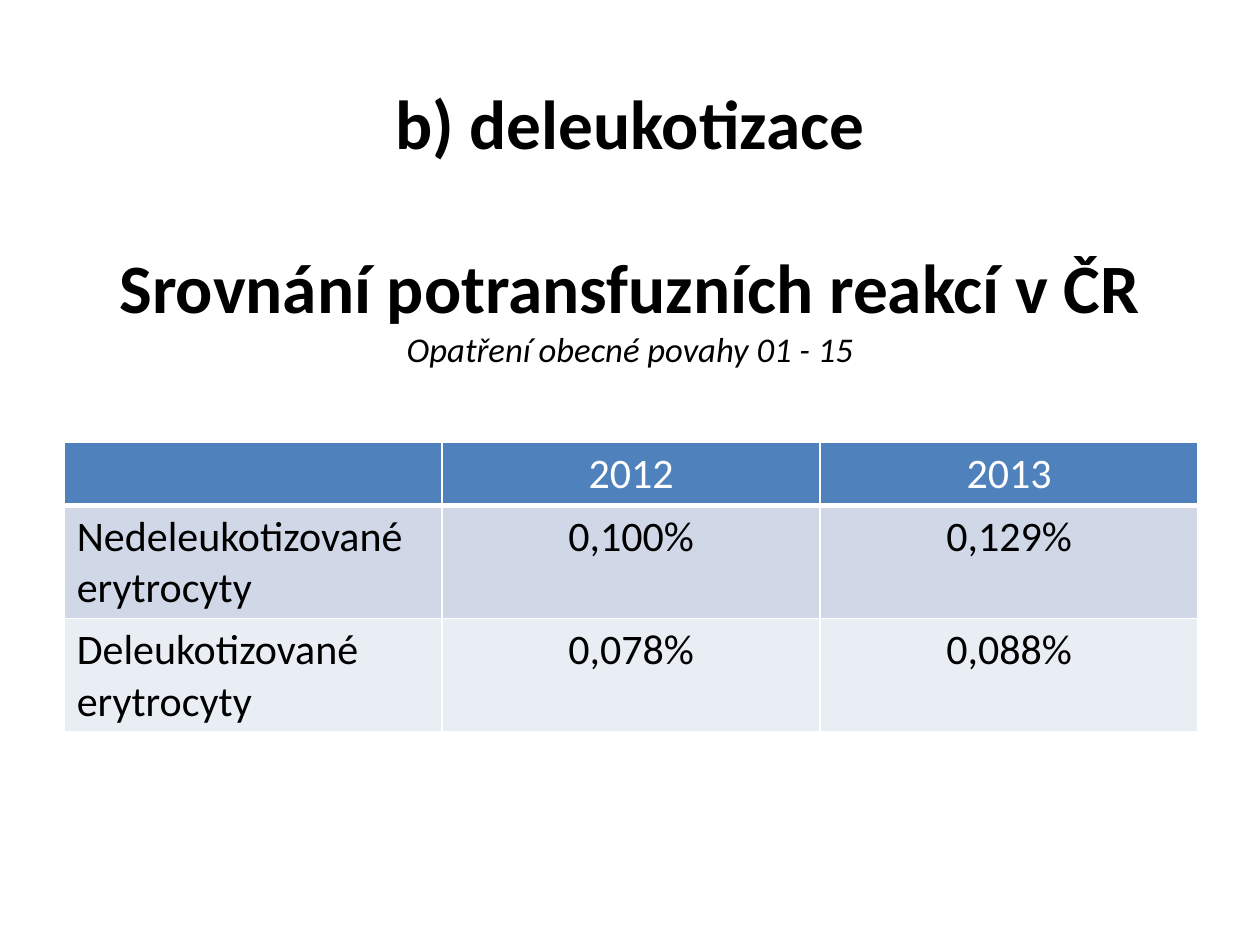
from lxml import etree
from pptx import Presentation
from pptx import util as u
from pptx.dml.color import RGBColor
from pptx.enum import text
from pptx.oxml.ns import qn

COLORS = {
    "text": "000000",
    "white": "FFFFFF",
    "header": "4F81BD",
    "odd_row": "D0D8E8",
    "even_row": "E9EDF4",
}
CENTER = text.PP_ALIGN.CENTER
LEFT = text.PP_ALIGN.LEFT


class SlideBuilder:
    """Holds the style and the slide being filled."""

    font = "Calibri"

    def __init__(self, slide):
        self.slide = slide

    def add_run(self, paragraph, wording, size, color="text", bold=False, italic=False):
        run = paragraph.add_run()
        run.text = wording
        run.font.name = self.font
        run.font.size = u.Pt(size)
        run.font.bold = bold
        run.font.italic = italic
        run.font.color.rgb = RGBColor.from_string(COLORS[color])

    def add_heading(self, left, top, width, height, lines):
        """Each line is (wording, size, bold, italic, space before in points)."""
        box = self.slide.shapes.add_textbox(*map(u.Inches, (left, top, width, height)))
        frame = box.text_frame
        frame.word_wrap = True
        for index, (wording, size, bold, italic, space) in enumerate(lines):
            paragraph = frame.add_paragraph() if index else frame.paragraphs[0]
            paragraph.alignment = CENTER
            paragraph.space_before = u.Pt(space)
            self.add_run(paragraph, wording, size, bold=bold, italic=italic)

    def set_borders(self, cell, bottom_width):
        properties = cell._tc.get_or_add_tcPr()
        widths = {"lnL": 1, "lnR": 1, "lnT": 1, "lnB": bottom_width}
        for index, (side, width) in enumerate(widths.items()):
            line = etree.Element(qn("a:" + side), w=str(u.Pt(width)))
            fill = etree.SubElement(line, qn("a:solidFill"))
            etree.SubElement(fill, qn("a:srgbClr"), val=COLORS["white"])
            properties.insert(index, line)

    def add_table(self, left, top, column_width, row_heights, rows, size):
        columns = len(rows[0])
        table = self.slide.shapes.add_table(
            len(rows), columns, u.Inches(left), u.Inches(top),
            u.Inches(column_width * columns), u.Inches(sum(row_heights)),
        ).table
        for column in table.columns:
            column.width = u.Inches(column_width)
        for row_index, values in enumerate(rows):
            table.rows[row_index].height = u.Inches(row_heights[row_index])
            is_header = row_index == 0
            fill = "header" if is_header else "odd_row" if row_index % 2 else "even_row"
            for column_index, value in enumerate(values):
                cell = table.cell(row_index, column_index)
                cell.fill.solid()
                cell.fill.fore_color.rgb = RGBColor.from_string(COLORS[fill])
                self.set_borders(cell, 3 if is_header else 1)
                paragraph = cell.text_frame.paragraphs[0]
                paragraph.alignment = CENTER if column_index else LEFT
                if value:
                    self.add_run(paragraph, value, size, "white" if is_header else "text")


def main():
    presentation = Presentation()
    presentation.slide_width = u.Inches(10)
    presentation.slide_height = u.Inches(7.5)
    builder = SlideBuilder(presentation.slides.add_slide(presentation.slide_layouts[6]))

    builder.add_heading(0.5, 0.59, 9, 2.45, [
        ("b) deleukotizace", 39.6, True, False, 0),
        ("Srovnání potransfuzních reakcí v ČR", 39.6, True, False, 46),
        ("Opatření obecné povahy 01 - 15", 19.8, False, True, 0),
    ])
    builder.add_table(0.51, 3.51, 3, [0.5, 0.9, 0.9], [
        ("", "2012", "2013"),
        ("Nedeleukotizované erytrocyty", "0,100%", "0,129%"),
        ("Deleukotizované erytrocyty", "0,078%", "0,088%"),
    ], size=24)

    presentation.save("out.pptx")


if __name__ == "__main__":
    main()
